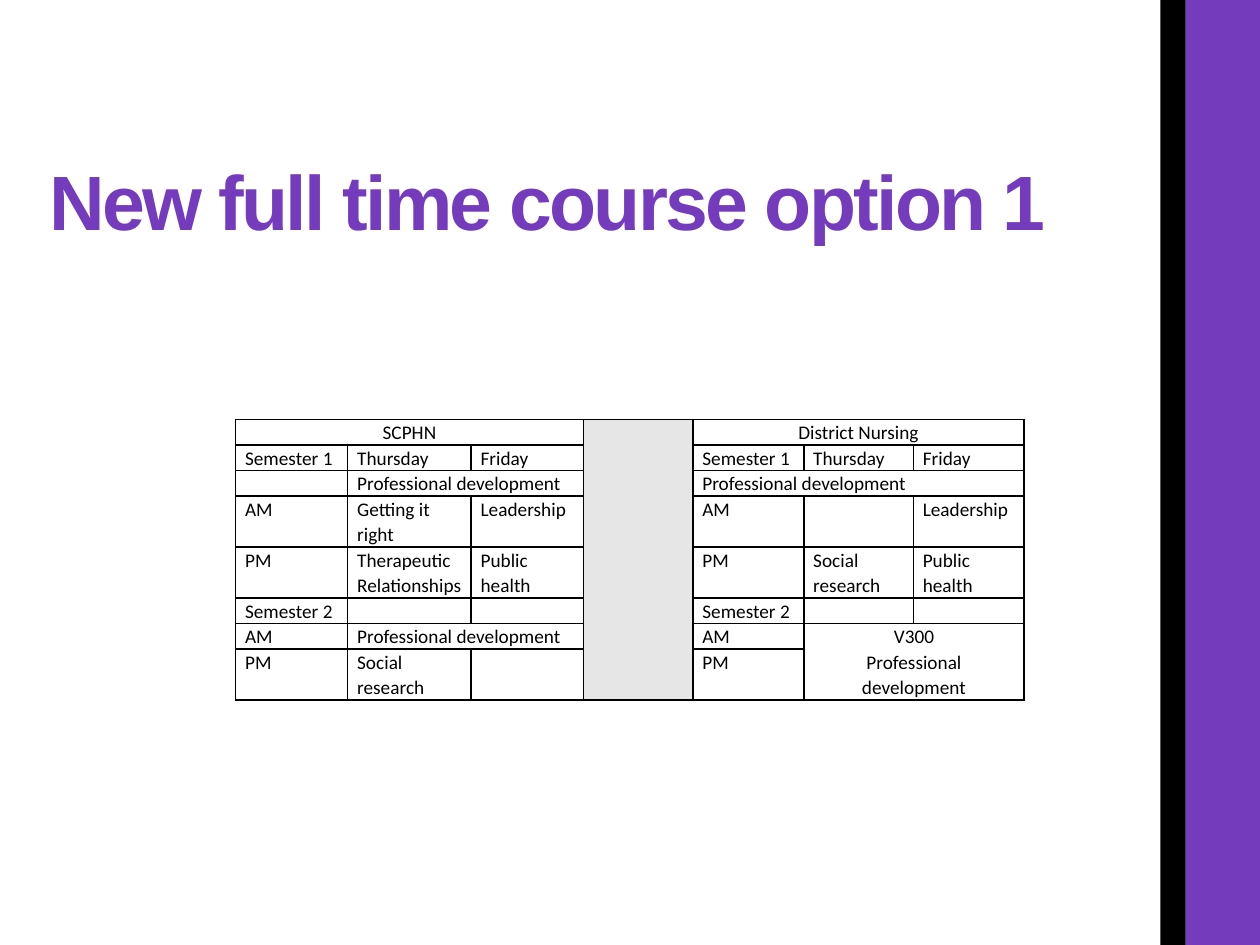
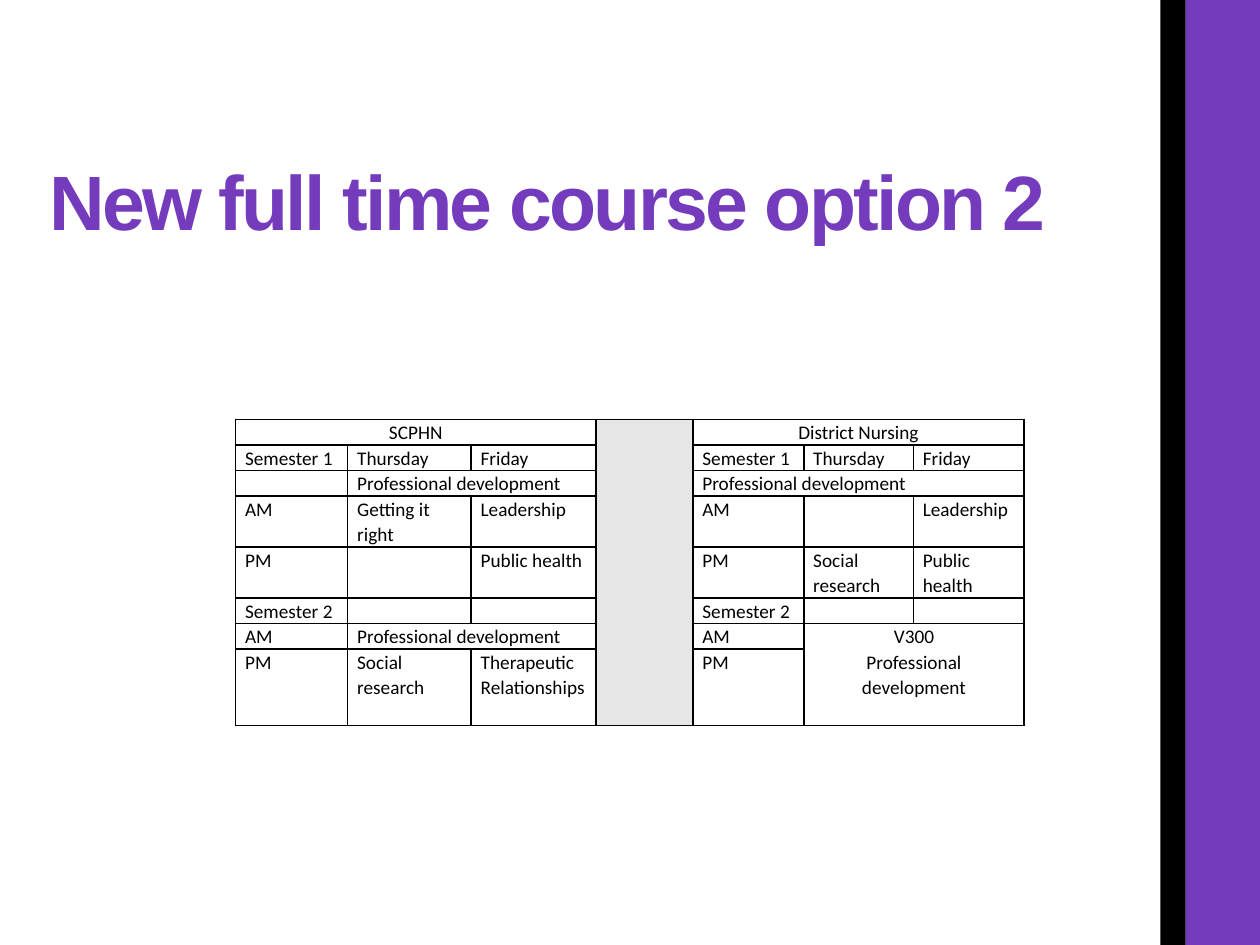
import lxml.etree
import pptx
import pptx.dml.color
import pptx.enum.shapes
import pptx.enum.text
import pptx.oxml.ns
import pptx.util

PURPLE = pptx.dml.color.RGBColor(0x75, 0x3B, 0xBD)
BLACK = pptx.dml.color.RGBColor(0, 0, 0)
GREY = pptx.dml.color.RGBColor(0xE7, 0xE6, 0xE6)
WIDTH = pptx.util.Inches(10)
HEIGHT = pptx.util.Inches(7.5)
TEXT_LINE = HEIGHT / 37
TITLE_FONT = {"name": "Arial", "size": pptx.util.Pt(44), "bold": True}
CELL_FONT = {"name": "Calibri", "size": pptx.util.Pt(11), "bold": False}
TITLE_FRAME = {
    "margin_left": 0, "margin_top": 0, "margin_right": 0, "margin_bottom": 0,
    "word_wrap": True, "vertical_anchor": pptx.enum.text.MSO_ANCHOR.BOTTOM,
}
CELL_MARGINS = {
    "margin_left": pptx.util.Pt(5.4), "margin_right": pptx.util.Pt(5.4),
    "margin_top": 0, "margin_bottom": 0,
}
BANDS = [(94.1, 5.9, PURPLE), (92.1, 2, BLACK)]
DEVELOPMENT = "Professional development"
GAP = 3

MERGES = [
    (0, 0, 0, 2), (0, GAP, 7, GAP), (0, 4, 0, 6), (2, 1, 2, 2),
    (2, 4, 2, 6), (6, 1, 6, 2), (6, 5, 7, 6),
]
CENTRED = [(0, 0), (0, 4), (6, 5)]
DISTRICT_NURSING = [
    ["District Nursing", "", ""],
    ["Semester 1", "Thursday", "Friday"],
    [DEVELOPMENT, "", ""],
    ["AM", "", "Leadership"],
    ["PM", "Social research", "Public health"],
    ["Semester 2", "", ""],
    ["AM", "V300\n" + DEVELOPMENT, ""],
    ["PM", "", ""],
]
SCPHN_START = [
    ["SCPHN", "", ""],
    ["Semester 1", "Thursday", "Friday"],
    ["", DEVELOPMENT, ""],
    ["AM", "Getting it right", "Leadership"],
]
SCPHN_SEMESTER_2 = [["Semester 2", "", ""], ["AM", DEVELOPMENT, ""]]
OPTIONS = [
    {
        "title": "New full time course option 1",
        "columns": [8.9, 9.8, 8.9, 8.7, 8.8, 8.7, 8.8],
        "row_lines": [1, 1, 1, 2, 2, 1, 1, 2],
        "semester_1_pm": ["PM", "Therapeutic Relationships", "Public health"],
        "semester_2_pm": ["PM", "Social research", ""],
    },
    {
        "title": "New full time course option 2",
        "columns": [8.9, 9.8, 9.9, 7.7, 8.8, 8.7, 8.8],
        "row_lines": [1, 1, 1, 2, 2, 1, 1, 3],
        "semester_1_pm": ["PM", "", "Public health"],
        "semester_2_pm": ["PM", "Social research", "Therapeutic Relationships"],
    },
]


def share(left, top, width, height):
    return [int(whole * percent / 100) for whole, percent in
            ((WIDTH, left), (HEIGHT, top), (WIDTH, width), (HEIGHT, height))]


def apply(target, values):
    for attribute, value in values.items():
        setattr(target, attribute, value)


deck = pptx.Presentation()
deck.slide_width = WIDTH
deck.slide_height = HEIGHT

for option in OPTIONS:
    slide = deck.slides.add_slide(deck.slide_layouts[6])

    for left, width, colour in BANDS:
        band = slide.shapes.add_shape(
            pptx.enum.shapes.MSO_SHAPE.RECTANGLE, *share(left, 0, width, 100))
        band.shadow.inherit = False
        band.fill.solid()
        band.fill.fore_color.rgb = colour
        band.line.fill.background()

    title = slide.shapes.add_textbox(*share(3.9, 5.33, 84.1, 20.8)).text_frame
    apply(title, TITLE_FRAME)
    heading = title.paragraphs[0]
    heading.line_spacing = 0.9
    heading_run = heading.add_run()
    heading_run.text = option["title"]
    apply(heading_run.font, TITLE_FONT)
    heading_run.font.color.rgb = PURPLE
    heading_run.font._element.set("spc", "-150")

    scphn = [*SCPHN_START, option["semester_1_pm"],
             *SCPHN_SEMESTER_2, option["semester_2_pm"]]
    timetable_rows = [left + [""] + right
                      for left, right in zip(scphn, DISTRICT_NURSING)]
    timetable = slide.shapes.add_table(
        len(timetable_rows), len(option["columns"]),
        *share(18.7, 44.4, sum(option["columns"]), 29.7)).table
    timetable.first_row = False
    timetable.horz_banding = False
    for column, percent in zip(timetable.columns, option["columns"]):
        column.width = int(WIDTH * percent / 100)
    for row, lines in zip(timetable.rows, option["row_lines"]):
        row.height = int(TEXT_LINE * lines)

    for row_index, entries in enumerate(timetable_rows):
        for column_index, entry in enumerate(entries):
            cell = timetable.cell(row_index, column_index)
            apply(cell, CELL_MARGINS)
            cell.text = entry
            for paragraph in cell.text_frame.paragraphs:
                paragraph.line_spacing = 1.07
                if (row_index, column_index) in CENTRED:
                    paragraph.alignment = pptx.enum.text.PP_ALIGN.CENTER
                for run in paragraph.runs:
                    apply(run.font, CELL_FONT)
                    run.font.color.rgb = BLACK
                if not entry:
                    lxml.etree.SubElement(
                        paragraph._p, pptx.oxml.ns.qn("a:endParaRPr"), sz="1100")
            properties = cell._tc.get_or_add_tcPr()
            for side in ("lnL", "lnR", "lnT", "lnB"):
                border = lxml.etree.SubElement(
                    properties, pptx.oxml.ns.qn("a:" + side), w=str(pptx.util.Pt(1)))
                ink = lxml.etree.SubElement(border, pptx.oxml.ns.qn("a:solidFill"))
                lxml.etree.SubElement(
                    ink, pptx.oxml.ns.qn("a:srgbClr"), val=str(BLACK))
            if column_index == GAP:
                cell.fill.solid()
                cell.fill.fore_color.rgb = GREY
            else:
                cell.fill.background()

    for top, left, bottom, right in MERGES:
        timetable.cell(top, left).merge(timetable.cell(bottom, right))

deck.save("out.pptx")
